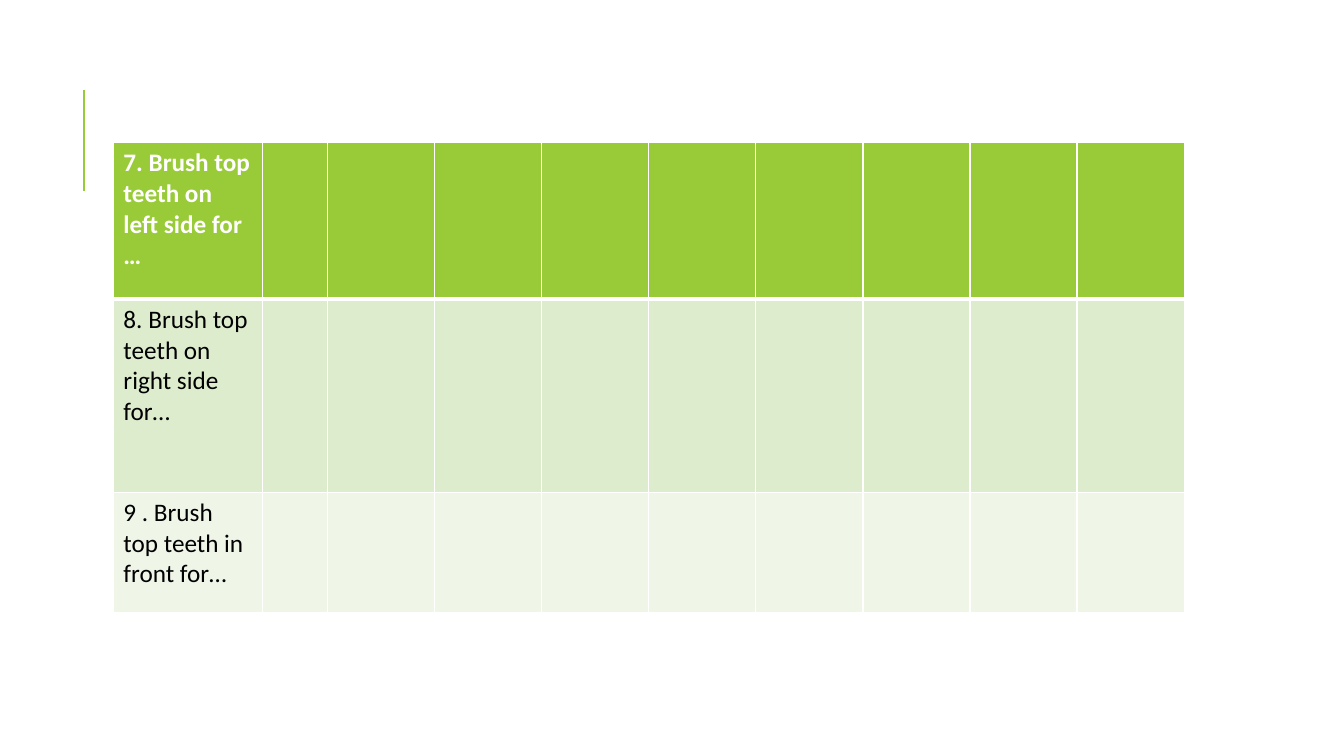
"""Build a tooth-brushing checklist slide with a three-step table."""
from dataclasses import dataclass

from lxml import etree
from pptx import Presentation
from pptx.dml.color import RGBColor
from pptx.enum.shapes import MSO_CONNECTOR
from pptx.oxml.ns import qn
from pptx.slide import Slide
from pptx.table import _Cell
from pptx.util import Emu, Pt

STRAIGHT = MSO_CONNECTOR.STRAIGHT
PX = 9525
BLANK_LAYOUT = 6

WHITE = RGBColor(0xFF, 0xFF, 0xFF)
BLACK = RGBColor(0x00, 0x00, 0x00)
GREEN = RGBColor(0x99, 0xCB, 0x38)
PALE_GREEN = RGBColor(0xDE, 0xEC, 0xCE)
FAINT_GREEN = RGBColor(0xEF, 0xF6, 0xE8)

TABLE_LEFT, TABLE_TOP = 108, 136
COLUMN_WIDTHS = [142, 62] + [102] * 8


@dataclass(frozen=True)
class Step:
    text: str
    height: int
    fill: RGBColor
    color: RGBColor
    bold: bool = False
    top_border: int = 1
    bottom_border: int = 1


STEPS = [
    Step("7. Brush top teeth on left side for …", 149, GREEN, WHITE,
         bold=True, bottom_border=3),
    Step("8. Brush top teeth on right side for…", 184, PALE_GREEN, BLACK,
         top_border=3),
    Step("9 . Brush top teeth in front for…", 114, FAINT_GREEN, BLACK),
]


def px(n: int) -> Emu:
    return Emu(n * PX)


def add_accent_line(s: Slide) -> None:
    line = s.shapes.add_connector(STRAIGHT, px(80), px(182), px(80), px(86))
    line.line.color.rgb = GREEN
    line.line.width = Pt(1.5)
    etree.SubElement(line._element.spPr, qn("a:effectLst"))


def format_cell(cell: _Cell, step: Step) -> None:
    tc_pr = cell._tc.get_or_add_tcPr()
    borders = {"lnL": 1, "lnR": 1, "lnT": step.top_border,
               "lnB": step.bottom_border}
    for tag, width in borders.items():
        ln = etree.SubElement(tc_pr, qn(f"a:{tag}"), w=str(Pt(width)))
        fill = etree.SubElement(ln, qn("a:solidFill"))
        etree.SubElement(fill, qn("a:srgbClr"), val=str(WHITE))
    cell.fill.solid()
    cell.fill.fore_color.rgb = step.fill


def add_step_text(cell: _Cell, step: Step) -> None:
    r = cell.text_frame.paragraphs[0].add_run()
    r.text = step.text
    r.font.name = "Calibri"
    r.font.size = Pt(18)
    r.font.bold = step.bold
    r.font.color.rgb = step.color


def add_step_table(s: Slide) -> None:
    height = sum(step.height for step in STEPS)
    table = s.shapes.add_table(
        len(STEPS), len(COLUMN_WIDTHS), px(TABLE_LEFT), px(TABLE_TOP),
        px(sum(COLUMN_WIDTHS)), px(height)).table
    for column, width in zip(table.columns, COLUMN_WIDTHS):
        column.width = px(width)
    for row, step in zip(table.rows, STEPS):
        row.height = px(step.height)
        for cell in row.cells:
            format_cell(cell, step)
        add_step_text(row.cells[0], step)


def main() -> None:
    prs = Presentation()
    prs.slide_width, prs.slide_height = px(1280), px(720)
    s = prs.slides.add_slide(prs.slide_layouts[BLANK_LAYOUT])
    add_accent_line(s)
    add_step_table(s)
    prs.save("out.pptx")


if __name__ == "__main__":
    main()
